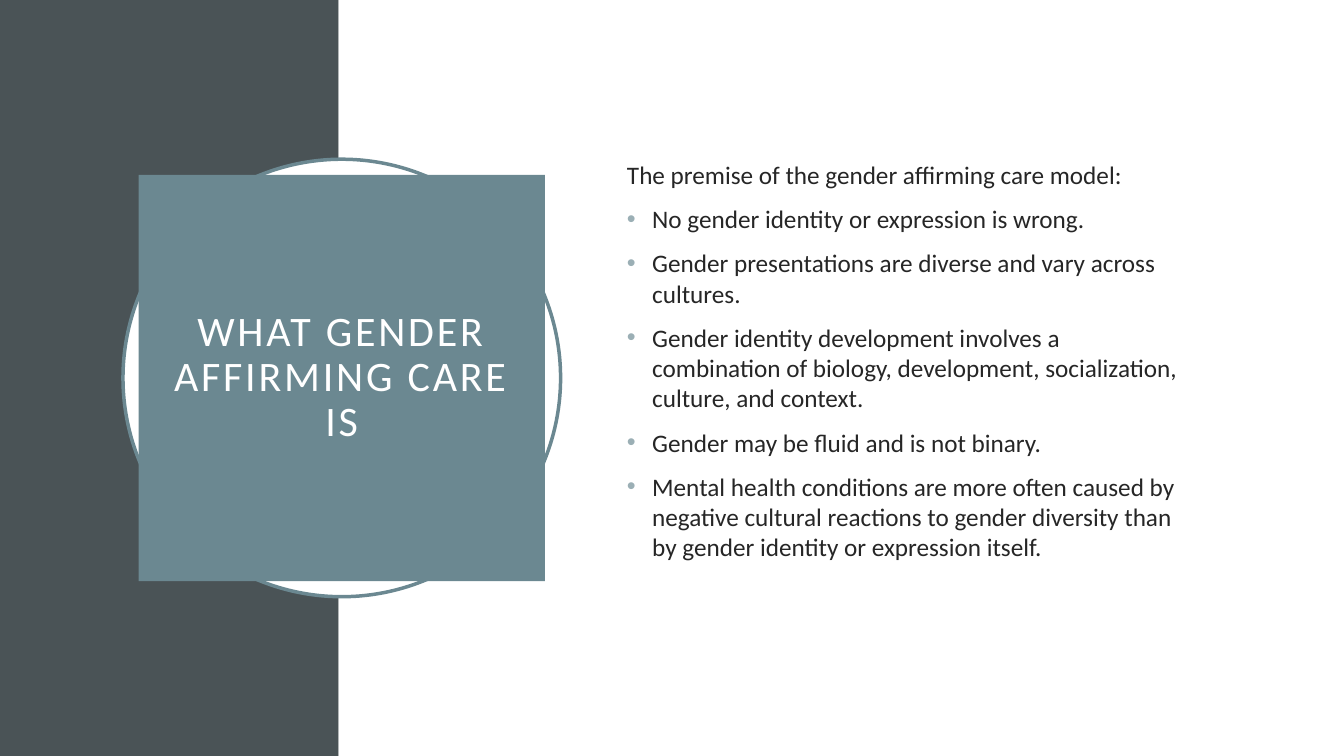
"""Build the slide on the premise of gender affirming care."""
from lxml import etree
from pptx import Presentation
from pptx.dml.color import RGBColor
from pptx.enum.shapes import MSO_SHAPE
from pptx.enum.text import MSO_ANCHOR, PP_ALIGN
from pptx.oxml.ns import qn
from pptx.util import Inches, Pt

RECT, OVAL = MSO_SHAPE.RECTANGLE, MSO_SHAPE.OVAL
MIDDLE, TOP, CENTER = MSO_ANCHOR.MIDDLE, MSO_ANCHOR.TOP, PP_ALIGN.CENTER

WIDTH, HEIGHT = 13.33, 7.5
FONT = "Calibri"
DARK, TEAL, WHITE, INK, BULLET = "4A5356", "6B8891", "FFFFFF", "262626", "9BAFB5"
TITLE = "WHAT GENDER AFFIRMING CARE IS"
PREMISE = "The premise of the gender affirming care model:"
POINTS = [
    "No gender identity or expression is wrong.",
    "Gender presentations are diverse and vary across cultures.",
    "Gender identity development involves a combination of biology, development, "
    "socialization, culture, and context.",
    "Gender may be fluid and is not binary.",
    "Mental health conditions are more often caused by negative cultural reactions "
    "to gender diversity than by gender identity or expression itself.",
]
BAND_WIDTH = 3.36
CENTER_X, CENTER_Y = 3.39, 3.75
RING, SQUARE = 4.34, 4.03
BODY = (6.12, 1.53, 5.82, 4.43)


def rgb(color):
    return RGBColor.from_string(color)


def add_block(s, kind, box, fill, line=None):
    sp = s.shapes.add_shape(kind, *map(Inches, box))
    sp.shadow.inherit = False
    sp.fill.solid()
    sp.fill.fore_color.rgb = rgb(fill)
    if line:
        sp.line.color.rgb = rgb(line)
        sp.line.width = Pt(2.5)
    else:
        sp.line.fill.background()
    return sp


def centered(size):
    return CENTER_X - size / 2, CENTER_Y - size / 2, size, size


def add_run(p, text, size, color):
    r = p.add_run()
    r.text = text
    r.font.name, r.font.size = FONT, Pt(size)
    r.font.color.rgb = rgb(color)
    return r


def add_bullet(p):
    pPr = p._p.get_or_add_pPr()
    pPr.set("marL", str(Inches(0.25)))
    pPr.set("indent", str(Inches(-0.25)))
    color = etree.SubElement(pPr, qn("a:buClr"))
    etree.SubElement(color, qn("a:srgbClr")).set("val", BULLET)
    etree.SubElement(pPr, qn("a:buFont")).set("typeface", "Arial")
    etree.SubElement(pPr, qn("a:buChar")).set("char", "•")


def add_title(s):
    tf = add_block(s, RECT, centered(SQUARE), TEAL).text_frame
    tf.word_wrap, tf.vertical_anchor = True, MIDDLE
    tf.margin_left = tf.margin_right = tf.margin_top = tf.margin_bottom = Inches(0.2)
    p = tf.paragraphs[0]
    p.alignment, p.line_spacing = CENTER, 0.9
    r = add_run(p, TITLE, 30, WHITE)
    r.font._element.set("spc", "200")


def add_body(s):
    tf = s.shapes.add_textbox(*map(Inches, BODY)).text_frame
    tf.word_wrap, tf.vertical_anchor = True, TOP
    add_run(tf.paragraphs[0], PREMISE, 18, INK)
    for point in POINTS:
        p = tf.add_paragraph()
        p.space_before = Pt(10)
        add_bullet(p)
        add_run(p, point, 18, INK)


def main():
    prs = Presentation()
    prs.slide_width, prs.slide_height = Inches(WIDTH), Inches(HEIGHT)
    s = prs.slides.add_slide(prs.slide_layouts[6])
    add_block(s, RECT, (0, 0, BAND_WIDTH, HEIGHT), DARK)
    add_block(s, RECT, (BAND_WIDTH, 0, WIDTH - BAND_WIDTH, HEIGHT), WHITE)
    add_block(s, OVAL, centered(RING), WHITE, TEAL)
    add_title(s)
    add_body(s)
    prs.save("out.pptx")


if __name__ == "__main__":
    main()
